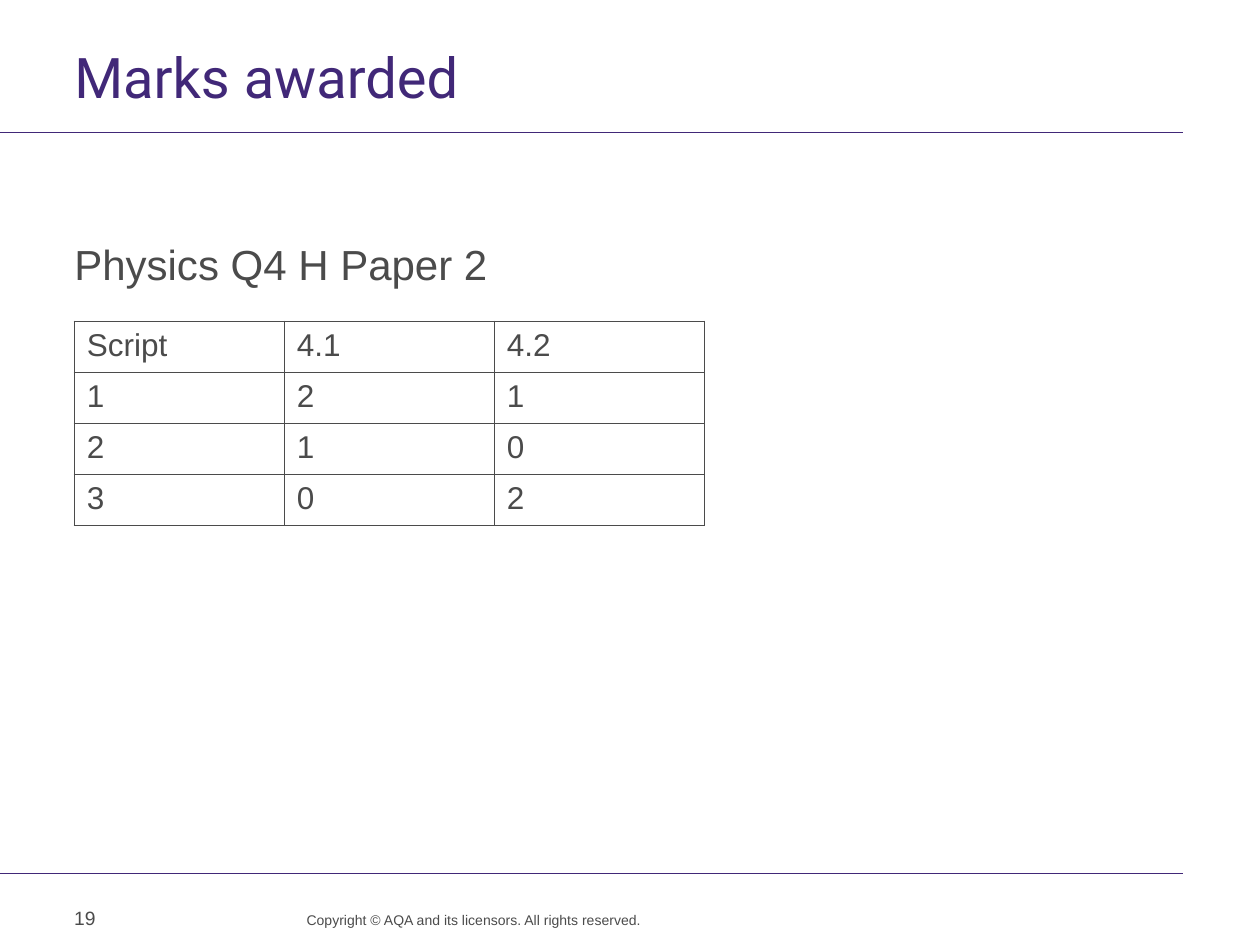
"""Build the "Marks awarded" slide with its table of marks."""
from lxml import etree
from pptx import Presentation
from pptx.dml.color import RGBColor
from pptx.enum.shapes import MSO_CONNECTOR
from pptx.enum.text import MSO_ANCHOR, PP_ALIGN
from pptx.oxml.ns import qn
from pptx.util import Pt

STRAIGHT = MSO_CONNECTOR.STRAIGHT
TOP, MIDDLE = MSO_ANCHOR.TOP, MSO_ANCHOR.MIDDLE
LEFT, RIGHT = PP_ALIGN.LEFT, PP_ALIGN.RIGHT
PURPLE = RGBColor(0x41, 0x28, 0x78)
GREY = RGBColor(0x4B, 0x4B, 0x4B)
MARGIN = 42.5


def add_text(p, text, size, name="Arial", color=GREY):
    r = p.add_run()
    r.text = text
    for key, value in {"size": Pt(size), "name": name}.items():
        setattr(r.font, key, value)
    r.font.color.rgb = color


def add_border(tc_pr, side):
    ln = etree.SubElement(tc_pr, qn(f"a:{side}"), w=str(Pt(1)))
    fill = etree.SubElement(ln, qn("a:solidFill"))
    etree.SubElement(fill, qn("a:srgbClr"), val=str(GREY))


prs = Presentation()
prs.slide_width, prs.slide_height = Pt(720), Pt(540)
s = prs.slides.add_slide(prs.slide_layouts[6])

for y in (75.6, 499):
    line = s.shapes.add_connector(STRAIGHT, Pt(0), Pt(y), Pt(676), Pt(y))
    line.line.color.rgb = PURPLE
    line.line.width = Pt(0.6)
    etree.SubElement(line._element.spPr, qn("a:effectLst"))

boxes = [
    ((MARGIN, 34.5, 633.5, 34), (0, 0, 7.2, 0), TOP, LEFT, Pt(28),
     ("Marks awarded", 32, "Roboto", PURPLE)),
    ((155.5, 520.5, 211, 18.5), (0, 0, 0, 0), TOP, RIGHT, Pt(10),
     ("Copyright © AQA and its licensors. All rights reserved.", 8)),
    ((MARGIN, 136, 633.5, 347), (0, 0, 7.2, 0), TOP, LEFT, None,
     ("Physics Q4 H Paper 2", 24)),
    ((35.3, 510, 54.7, 28.8), (7.2, 3.6, 7.2, 3.6), MIDDLE, LEFT, None,
     ("19", 11)),
]
for place, insets, anchor, align, spacing, text in boxes:
    tf = s.shapes.add_textbox(*map(Pt, place)).text_frame
    tf.word_wrap = True
    tf.vertical_anchor = anchor
    for side, inset in zip(("left", "top", "right", "bottom"), insets):
        setattr(tf, f"margin_{side}", Pt(inset))
    p = tf.paragraphs[0]
    p.alignment = align
    p.line_spacing = spacing
    add_text(p, *text)

marks = [
    ("Script", "4.1", "4.2"),
    ("1", "2", "1"),
    ("2", "1", "0"),
    ("3", "0", "2"),
]
table = s.shapes.add_table(
    len(marks), len(marks[0]), Pt(MARGIN), Pt(183.6), Pt(360), Pt(116.8)
).table
table.first_row = table.horz_banding = False
for row, values in zip(table.rows, marks):
    for cell, value in zip(row.cells, values):
        add_text(cell.text_frame.paragraphs[0], value, 18)
        tc_pr = cell._tc.get_or_add_tcPr()
        for side in ("lnL", "lnR", "lnT", "lnB"):
            add_border(tc_pr, side)
        cell.fill.background()

prs.save("out.pptx")
